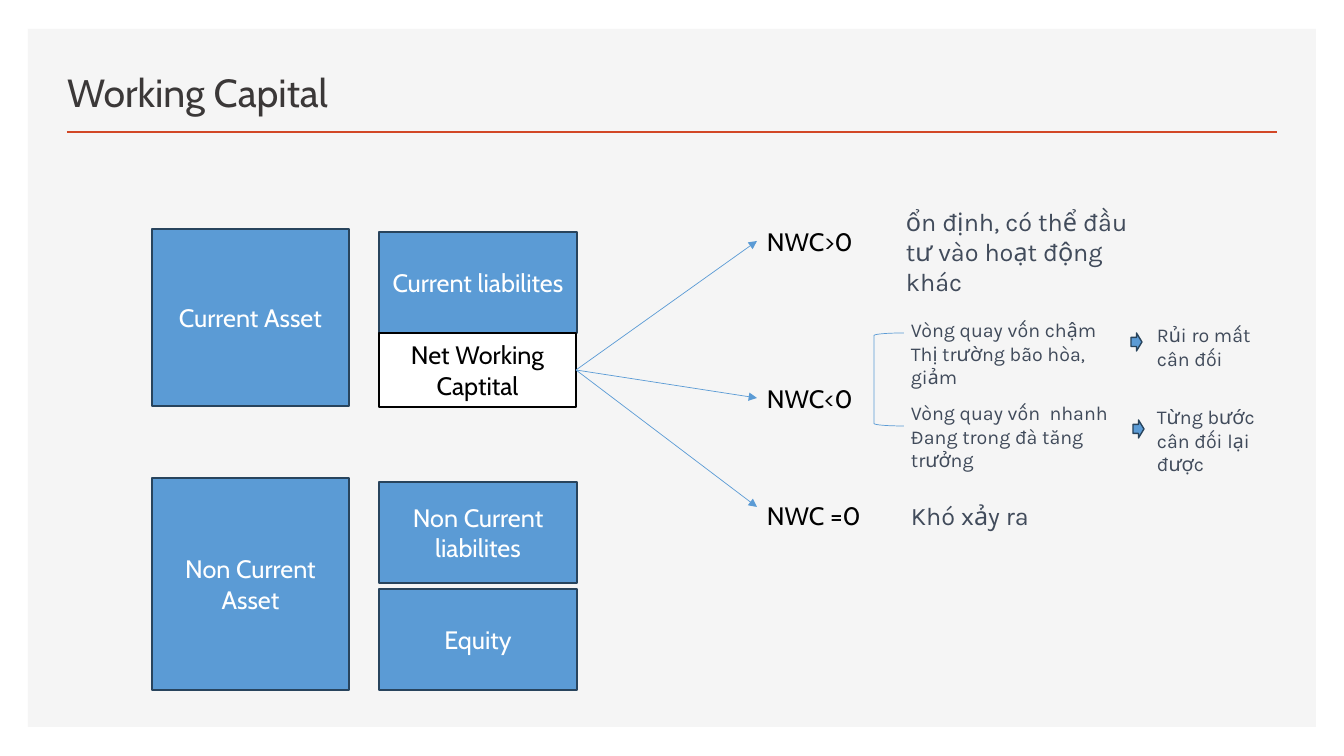
from dataclasses import dataclass
from lxml import etree
from pptx import Presentation
from pptx import util as u
from pptx.dml import color
from pptx.enum import shapes, text
from pptx.oxml import ns

KIND = shapes.MSO_SHAPE


@dataclass
class Theme:
    head: str = "Cabin"
    body: str = "Karla"
    white: str = "FFFFFF"
    black: str = "000000"
    panel: str = "F5F5F5"
    rule: str = "D24726"
    title: str = "3B3838"
    blue: str = "5B9BD5"
    edge: str = "28445D"
    note: str = "414B5B"
    big: int = 28
    mid: int = 18
    small: int = 14


def px(n):
    return u.Emu(round(n * 914400 / 100.8))


def rgb(code):
    return color.RGBColor.from_string(code)


class Deck:
    def __init__(self, theme):
        self.look = theme
        self.file = Presentation()
        self.file.slide_width, self.file.slide_height = px(1344), px(756)
        self.page = self.file.slides.add_slide(self.file.slide_layouts[5])

    def words(self, frame, lines, font, size, tint, align=text.PP_ALIGN.LEFT):
        frame.word_wrap = True
        frame.text = lines
        for para in frame.paragraphs:
            para.alignment = align
            para.font.name, para.font.size = font, u.Pt(size)
            para.font.color.rgb = rgb(tint)

    def title(self, lines, *box):
        item = self.page.shapes.title
        item.left, item.top, item.width, item.height = map(px, box)
        frame = item.text_frame
        self.words(frame, lines, self.look.head, self.look.big, self.look.title)
        frame.auto_size = text.MSO_AUTO_SIZE.NONE
        frame.vertical_anchor = text.MSO_ANCHOR.BOTTOM

    def shape(self, kind, box, fill=None, edge=None, width=1):
        item = self.page.shapes.add_shape(kind, *map(px, box))
        item.shadow.inherit = False
        if fill:
            item.fill.solid()
            item.fill.fore_color.rgb = rgb(fill)
        else:
            item.fill.background()
        if edge:
            item.line.color.rgb = rgb(edge)
            item.line.width = u.Pt(width)
        else:
            item.line.fill.background()
        return item

    def panel(self, *box):
        item = self.shape(KIND.RECTANGLE, box, self.look.panel)
        self.page.shapes._spTree.insert(2, item._element)  # behind the title

    def block(self, lines, box, fill, edge, tint):
        item = self.shape(KIND.RECTANGLE, box, fill, edge)
        frame = item.text_frame
        self.words(frame, lines, self.look.head, self.look.mid, tint,
                   text.PP_ALIGN.CENTER)
        frame.vertical_anchor = text.MSO_ANCHOR.MIDDLE
        return item

    def label(self, lines, box, font, size, tint):
        item = self.page.shapes.add_textbox(*map(px, box))
        self.words(item.text_frame, lines, font, size, tint)
        item.text_frame.auto_size = text.MSO_AUTO_SIZE.SHAPE_TO_FIT_TEXT
        return item

    def line(self, start, end, tint, width, arrow=False):
        item = self.page.shapes.add_connector(
            shapes.MSO_CONNECTOR.STRAIGHT, *map(px, start + end))
        item.line.color.rgb = rgb(tint)
        item.line.width = u.Pt(width)
        props = item._element.spPr
        if arrow:
            etree.SubElement(props.find(ns.qn("a:ln")), ns.qn("a:tailEnd"),
                             type="triangle")
        etree.SubElement(props, ns.qn("a:effectLst"))
        return item


def main():
    look = Theme()
    deck = Deck(look)

    # Frame and heading
    deck.panel(28, 29, 1288, 698)
    deck.line((67, 132), (1277, 132), look.rule, 2)
    deck.title("Working Capital", 57, 49, 758, 71)

    # Balance sheet blocks
    for lines, box in (
        ("Current Asset", (152, 229, 197, 177)),
        ("Non Current Asset", (152, 478, 197, 212)),
        ("Current liabilites", (379, 232, 198, 101)),
        ("Non Current liabilites", (379, 482, 198, 101)),
        ("Equity", (379, 589, 198, 101)),
    ):
        deck.block(lines, box, look.blue, look.edge, look.white)
    net = deck.block("Net Working Captital", (379, 333, 197, 74),
                     look.white, look.black, look.black)

    # Three cases, each with an arrow from net working capital
    high = 40
    for lines, top, tip in (
        ("NWC>0", 221, 241),
        ("NWC<0", 378, 398),
        ("NWC =0", 495, 507),
    ):
        case = deck.label(lines, (757, top, 117, high),
                          look.head, look.mid, look.black)
        link = deck.line((576, 370), (757, tip), look.blue, 0.5, True)
        link.begin_connect(net, 3)
        if tip == top + high // 2:
            link.end_connect(case, 1)

    # What each case means
    deck.shape(KIND.LEFT_BRACKET, (874, 333, 30, 93), edge=look.blue, width=0.5)
    for lines, box, size in (
        ("ổn định, có thể đầu tư vào hoạt động khác", (896, 201, 270, 72), look.mid),
        ("Khó xảy ra", (901, 495, 321, 40), look.mid),
        ("Vòng quay vốn chậm\nThị trường bão hòa, giảm", (901, 313, 229, 57), look.small),
        ("Vòng quay vốn  nhanh\nĐang trong đà tăng trưởng", (901, 396, 241, 57), look.small),
        ("Rủi ro mất cân đối", (1147, 318, 150, 57), look.small),
        ("Từng bước cân đối lại được", (1147, 400, 150, 57), look.small),
    ):
        deck.label(lines, box, look.body, size, look.note)
    for left, top in ((1131, 333), (1133, 420)):
        deck.shape(KIND.RIGHT_ARROW, (left, top, 11, 18), look.blue, look.edge)

    deck.file.save("out.pptx")


if __name__ == "__main__":
    main()
